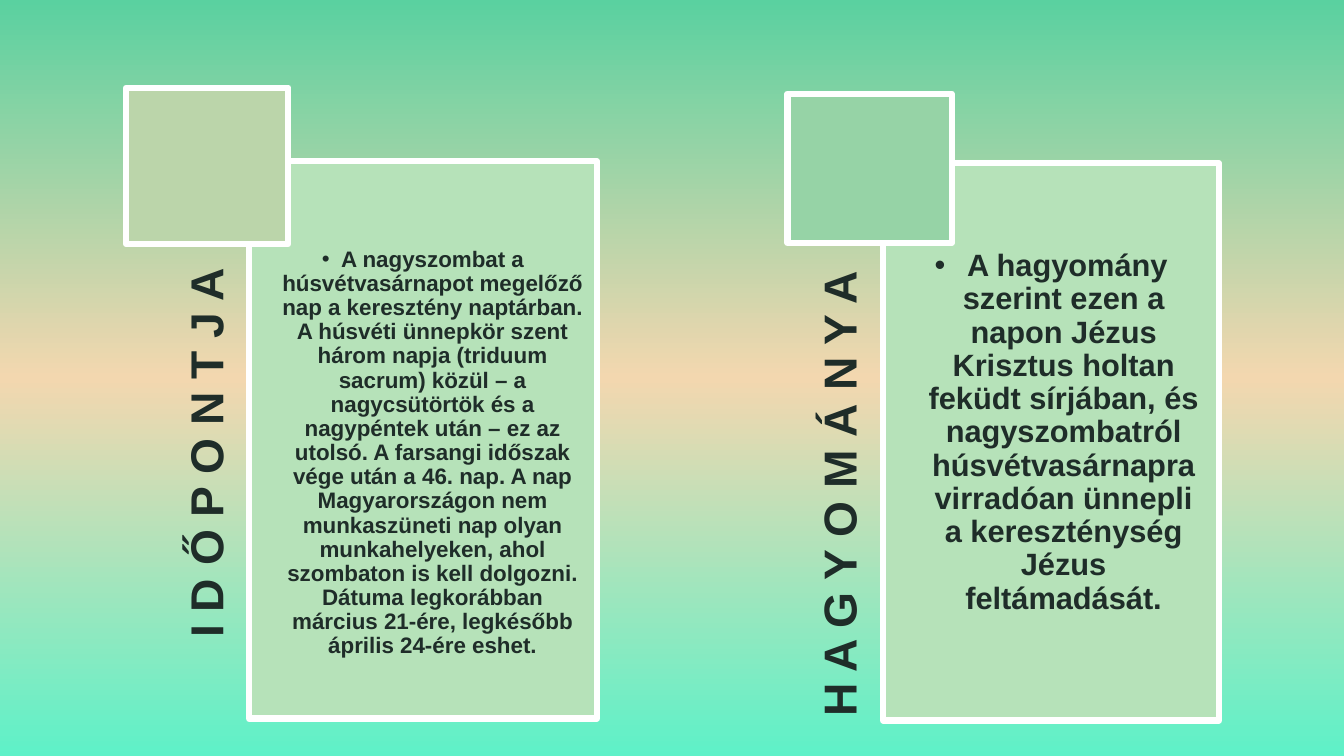
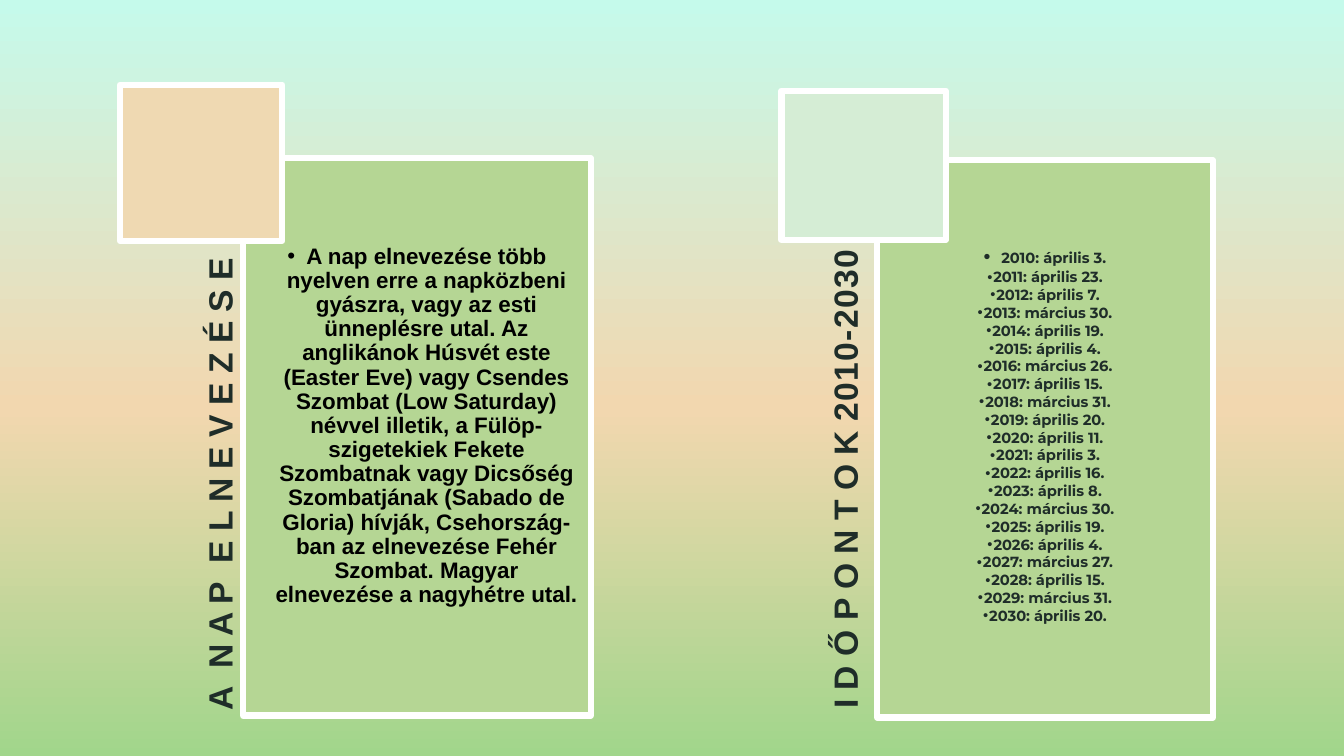
from copy import deepcopy

from lxml import etree
from pptx import Presentation, util as u
from pptx.dml.color import RGBColor
from pptx.enum import shapes, text
from pptx.oxml import ns

INK = {"dark": "1F2D29", "black": "000000", "edge": "FFFFFF"}
FONT = "Arial"

# Colours of each slide: sky holds (position, colour) stops
DAWN = {
    "sky": [(0, "5AD1A0"), (0.5, "F3D7AF"), (1, "5EF1C8")],
    "card": "B6E2B9", "left": "BBD5AA", "right": "96D3A6",
}
FIELD = {
    "sky": [(0, "C5FAEB"), (0.54, "F2D7AF"), (1, "A1D68B")],
    "card": "B5D694", "left": "EFD9B2", "right": "D5EDD5",
}

# Card and corner square of each column: left, top, width, height
COLS = {
    "left": {"card": (2.47, 1.6, 3.45, 5.53), "tile": (1.25, 0.87, 1.61, 1.55)},
    "right": {"card": (8.76, 1.62, 3.33, 5.53), "tile": (7.81, 0.93, 1.63, 1.48)},
}

TIME = (
    "A nagyszombat a húsvétvasárnapot megelőző nap a keresztény naptárban. "
    "A húsvéti ünnepkör szent három napja (triduum sacrum) közül – a "
    "nagycsütörtök és a nagypéntek után – ez az utolsó. A farsangi időszak "
    "vége után a 46. nap. A nap Magyarországon nem munkaszüneti nap olyan "
    "munkahelyeken, ahol szombaton is kell dolgozni. Dátuma legkorábban "
    "március 21-ére, legkésőbb április 24-ére eshet."
)
LORE = (
    " A hagyomány szerint ezen a napon Jézus Krisztus holtan feküdt sírjában, "
    "és nagyszombatról húsvétvasárnapra virradóan ünnepli a kereszténység "
    "Jézus feltámadását."
)
NAME = (
    "A nap elnevezése több nyelven erre a napközbeni gyászra, vagy az esti "
    "ünneplésre utal. Az anglikánok Húsvét este (Easter Eve) vagy Csendes "
    "Szombat (Low Saturday) névvel illetik, a Fülöp-szigetekiek Fekete "
    "Szombatnak vagy Dicsőség Szombatjának (Sabado de Gloria) hívják, "
    "Csehország-ban az elnevezése Fehér Szombat. Magyar elnevezése "
    "a nagyhétre utal."
)
DAYS = (
    "április 3, április 23, április 7, március 30, április 19, április 4, "
    "március 26, április 15, március 31, április 20, április 11, április 3, "
    "április 16, április 8, március 30, április 19, április 4, március 27, "
    "április 15, március 31, április 20"
).split(", ")


class Deck:
    def __init__(self):
        self.prs = Presentation()
        self.prs.slide_width = u.Inches(13.33)
        self.prs.slide_height = u.Inches(7.5)

    def page(self, look, dx=0, dy=0):
        """Start a slide with its gradient; dx and dy shift the columns."""
        self.look, self.dx, self.dy = look, dx, dy
        self.slide = self.prs.slides.add_slide(self.prs.slide_layouts[6])
        fill = self.slide.background.fill
        fill.gradient()
        fill.gradient_angle = 270
        stops = next(self.slide.element.iter(ns.qn("a:gsLst")))
        stops.append(deepcopy(stops[0]))
        for stop, (pos, hue) in zip(fill.gradient_stops, look["sky"]):
            stop.color.rgb = RGBColor.from_string(hue)
            stop.position = pos

    def style(self, run, size, hue=INK["dark"], face=FONT):
        font = run.font
        font.name, font.size, font.bold = face, u.Pt(size), True
        font.color.rgb = RGBColor.from_string(hue)

    def frame(self, shape, pads):
        tf = shape.text_frame
        tf.word_wrap = True
        tf.vertical_anchor = text.MSO_ANCHOR.TOP
        tf.margin_left, tf.margin_top, tf.margin_right, tf.margin_bottom = map(u.Inches, pads)
        return tf

    def rect(self, box, hue):
        x, y, w, h = box
        shape = self.slide.shapes.add_shape(
            shapes.MSO_SHAPE.RECTANGLE,
            *map(u.Inches, (x + self.dx, y + self.dy, w, h)))
        shape.shadow.inherit = False
        shape.fill.solid()
        shape.fill.fore_color.rgb = RGBColor.from_string(hue)
        shape.line.color.rgb = RGBColor.from_string(INK["edge"])
        shape.line.width = u.Pt(4.5)
        etree.SubElement(shape.line._get_or_add_ln(), ns.qn("a:round"))
        return shape

    def title(self, x, y, wide, size, words, years=""):
        """Upward text whose visible left top corner is at x, y."""
        long = 5.53
        box = self.slide.shapes.add_textbox(
            u.Inches(x + (wide - long) / 2), u.Inches(y + (long - wide) / 2),
            u.Inches(long), u.Inches(wide))
        box.rotation = 270
        para = self.frame(box, (0, 0, 0.86, 0)).paragraphs[0]
        para.text = words
        para.alignment = text.PP_ALIGN.RIGHT
        para.line_spacing = 0.9
        if years:
            run = para.add_run()
            run.text = years
            run.font._element.set("spc", "100")
        for run in para.runs:
            self.style(run, size)

    def bullet(self, para, dent):
        para.level = 1
        props = para._p.get_or_add_pPr()
        props.set("marL", str(u.Inches(dent)))
        props.set("indent", str(-u.Inches(dent)))
        etree.SubElement(props, ns.qn("a:buFont")).set("typeface", FONT)
        etree.SubElement(props, ns.qn("a:buChar")).set("char", "•")
        para.alignment = text.PP_ALIGN.CENTER
        para.line_spacing = 0.9
        para.space_after = u.Pt(1.4)

    def card(self, side, pad):
        """Panel with its corner square; gives back the text frame."""
        col = COLS[side]
        panel = self.rect(col["card"], self.look["card"])
        self.rect(col["tile"], self.look[side])
        return self.frame(panel, (pad, 0.86, pad, pad))

    def prose(self, side, pad, words, size, dent, hue=INK["dark"]):
        para = self.card(side, pad).paragraphs[0]
        para.text = words
        self.bullet(para, dent)
        self.style(para.runs[0], size, hue)

    def dates(self, side, pad, start, days):
        tf = self.card(side, pad)
        tf.text = "\n".join(f"{year}: {day}." for year, day in enumerate(days, start))
        for para in tf.paragraphs:
            self.bullet(para, 0.06)
            self.style(para.runs[0], 10.5, face="Montserrat")
        # The first line opens with a larger space
        head = tf.paragraphs[0]
        line = head.runs[0].text
        head.text = " "
        head.add_run().text = line
        head._p.pPr.set("marL", str(u.Inches(0.12)))
        head._p.pPr.set("indent", str(-u.Inches(0.12)))
        self.style(head.runs[0], 14)
        self.style(head.runs[1], 10.5, face="Montserrat")


def main():
    deck = Deck()

    # Date and tradition
    deck.page(DAWN)
    deck.title(1.82, 1.8, 0.61, 33, "I D Ő P O N T J A")
    deck.prose("left", 0.12, TIME, 16, 0.19)
    deck.title(8.1, 1.83, 0.65, 33, "H A G Y O M Á N Y A")
    deck.prose("right", 0.17, LORE, 22, 0.25)

    # Name and calendar
    deck.page(FIELD, -0.06, -0.03)
    deck.title(2.02, 1.7, 0.61, 24, "A  N A P  E L N E V E Z É S E")
    deck.prose("left", 0.12, NAME, 16, 0.19, INK["black"])
    deck.title(8.22, 1.62, 0.65, 24, "I D Ő P O N T O K ", "2010-2030")
    deck.dates("right", 0.11, 2010, DAYS)

    deck.prs.save("out.pptx")


if __name__ == "__main__":
    main()
